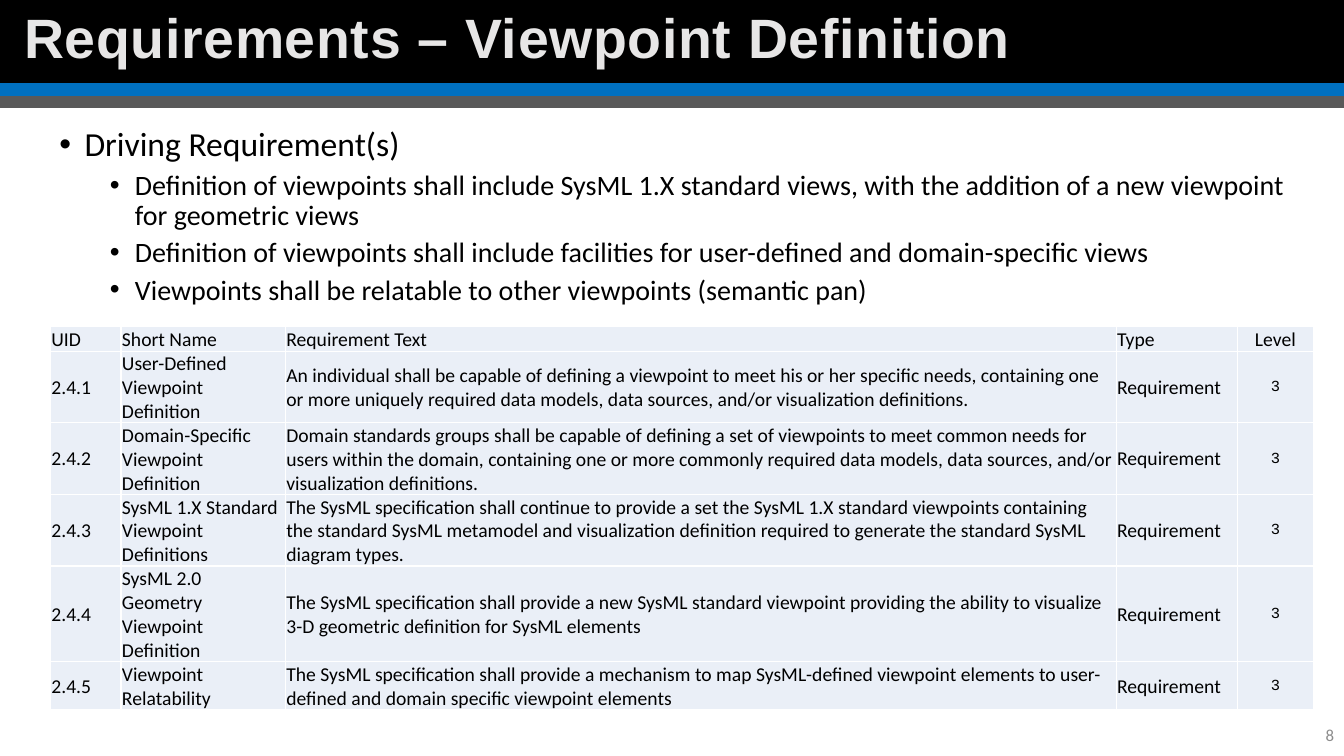
from lxml import etree
from pptx import Presentation
from pptx.dml.color import RGBColor
from pptx.enum.shapes import MSO_CONNECTOR, MSO_SHAPE
from pptx.enum.text import MSO_ANCHOR, PP_ALIGN
from pptx.oxml.ns import qn
from pptx.util import Inches, Pt

RECTANGLE = MSO_SHAPE.RECTANGLE
STRAIGHT = MSO_CONNECTOR.STRAIGHT
TOP, MIDDLE = MSO_ANCHOR.TOP, MSO_ANCHOR.MIDDLE
LEFT, CENTER, RIGHT = PP_ALIGN.LEFT, PP_ALIGN.CENTER, PP_ALIGN.RIGHT

SLIDE_WIDTH = 13.33
BLACK, WHITE, BLUE, GRAY = "000000", "FFFFFF", "0070C0", "595959"
TITLE_GRAY, NUMBER_GRAY, CELL_BLUE = "E7E6E6", "8C8C8C", "EAEFF7"

DRIVING_REQUIREMENTS = [
    (0, "Driving Requirement(s)"),
    (1, "Definition of viewpoints shall include SysML 1.X standard views, "
        "with the addition of a new viewpoint for geometric views"),
    (1, "Definition of viewpoints shall include facilities for user-defined "
        "and domain-specific views"),
    (1, "Viewpoints shall be relatable to other viewpoints (semantic pan)"),
]
BULLET_STYLES = [(0.25, 24, 10), (0.75, 20, 5)]

HEADINGS = ["UID", "Short Name", "Requirement Text", "Type", "Level"]
REQUIREMENTS = [
    ("User-Defined Viewpoint Definition",
     "An individual shall be capable of defining a viewpoint to meet his or her "
     "specific needs, containing one or more uniquely required data models, data "
     "sources, and/or visualization definitions."),
    ("Domain-Specific Viewpoint Definition",
     "Domain standards groups shall be capable of defining a set of viewpoints to "
     "meet common needs for users within the domain, containing one or more commonly "
     "required data models, data sources, and/or visualization definitions."),
    ("SysML 1.X Standard Viewpoint Definitions",
     "The SysML specification shall continue to provide a set the SysML 1.X standard "
     "viewpoints containing the standard SysML metamodel and visualization definition "
     "required to generate the standard SysML diagram types."),
    ("SysML 2.0 Geometry Viewpoint Definition",
     "The SysML specification shall provide a new SysML standard viewpoint providing "
     "the ability to visualize 3-D geometric definition for SysML elements"),
    ("Viewpoint Relatability",
     "The SysML specification shall provide a mechanism to map SysML-defined viewpoint "
     "elements to user-defined and domain specific viewpoint elements"),
]
COLUMN_WIDTHS = [0.7, 1.63, 8.24, 1.2, 0.76]
ROW_HEIGHTS = [0.23, 0.71, 0.71, 0.71, 0.95, 0.47]


def rgb(color):
    return RGBColor.from_string(color)


def set_font(paragraph, size, color=BLACK, name="Calibri", bold=False):
    font = paragraph.font
    font.size = Pt(size)
    font.name = name
    font.bold = bold
    font.color.rgb = rgb(color)


def add_band(slide, top, height, color):
    band = slide.shapes.add_shape(
        RECTANGLE, 0, Inches(top), Inches(SLIDE_WIDTH), Inches(height))
    band.shadow.inherit = False
    band.fill.solid()
    band.fill.fore_color.rgb = rgb(color)
    band.line.fill.background()


def add_stripe(slide, y, color, weight):
    stripe = slide.shapes.add_connector(
        STRAIGHT, 0, Inches(y), Inches(SLIDE_WIDTH), Inches(y))
    stripe.line.color.rgb = rgb(color)
    stripe.line.width = Pt(weight)
    etree.SubElement(stripe._element.spPr, qn("a:effectLst"))


def add_text_frame(slide, left, top, width, height, anchor):
    box = slide.shapes.add_textbox(
        Inches(left), Inches(top), Inches(width), Inches(height))
    frame = box.text_frame
    frame.word_wrap = True
    frame.vertical_anchor = anchor
    return frame


def add_title(slide, text):
    title = add_text_frame(slide, 0.14, 0.12, 10.54, 0.57, MIDDLE).paragraphs[0]
    title.line_spacing = 0.9
    title.text = text
    set_font(title, 39.6, TITLE_GRAY, "Arial", True)
    title.runs[0].font._element.set("spc", "50")


def add_bullets(slide, items):
    frame = add_text_frame(slide, 0.49, 1.22, 12.35, 2.35, TOP)
    for index, (level, text) in enumerate(items):
        bullet = frame.add_paragraph() if index else frame.paragraphs[0]
        indent, size, space = BULLET_STYLES[level]
        bullet.text = text
        bullet.level = level
        bullet.line_spacing = 0.9
        bullet.space_before = Pt(space)
        properties = bullet._p.get_or_add_pPr()
        properties.set("marL", str(Inches(indent)))
        properties.set("indent", str(Inches(-0.25)))
        etree.SubElement(properties, qn("a:buFont"), typeface="Arial")
        etree.SubElement(properties, qn("a:buChar"), char="•")
        set_font(bullet, size)


def add_borders(cell, color, weight):
    properties = cell._tc.get_or_add_tcPr()
    for side in ("lnL", "lnR", "lnT", "lnB"):
        border = etree.SubElement(properties, qn(f"a:{side}"), w=str(Pt(weight)))
        fill = etree.SubElement(border, qn("a:solidFill"))
        etree.SubElement(fill, qn("a:srgbClr"), val=color)


def fill_cell(cell, text, size, font_name, alignment):
    cell.margin_left = cell.margin_right = cell.margin_top = Inches(0.01)
    cell.margin_bottom = 0
    cell.vertical_anchor = MIDDLE
    add_borders(cell, WHITE, 1)
    cell.fill.solid()
    cell.fill.fore_color.rgb = rgb(CELL_BLUE)
    paragraph = cell.text_frame.paragraphs[0]
    paragraph.text = text
    paragraph.alignment = alignment
    set_font(paragraph, size, name=font_name)


def add_requirements_table(slide):
    rows = [HEADINGS] + [
        (f"2.4.{number}", name, text, "Requirement", "3")
        for number, (name, text) in enumerate(REQUIREMENTS, 1)]
    table = slide.shapes.add_table(
        len(rows), len(HEADINGS), Inches(0.5), Inches(3.24),
        Inches(sum(COLUMN_WIDTHS)), Inches(sum(ROW_HEIGHTS))).table
    for column, width in zip(table.columns, COLUMN_WIDTHS):
        column.width = Inches(width)
    level_column = len(HEADINGS) - 1
    for r, (values, height) in enumerate(zip(rows, ROW_HEIGHTS)):
        table.rows[r].height = Inches(height)
        for c, value in enumerate(values):
            is_level = c == level_column
            size, name = (11, "Courier New") if r and is_level else (14, "Calibri")
            fill_cell(table.cell(r, c), value, size, name,
                      CENTER if is_level else LEFT)


def add_page_number(slide, number):
    page = add_text_frame(slide, 10.33, 7.09, 3, 0.4, MIDDLE).paragraphs[0]
    page.text = number
    page.alignment = RIGHT
    set_font(page, 12, NUMBER_GRAY)


def main():
    deck = Presentation()
    deck.slide_width, deck.slide_height = Inches(SLIDE_WIDTH), Inches(7.5)
    slide = deck.slides.add_slide(deck.slide_layouts[6])
    add_band(slide, 0, 1.06, BLACK)
    add_band(slide, 0.95, 0.12, GRAY)
    add_stripe(slide, 0.89, BLUE, 9)
    add_title(slide, "Requirements – Viewpoint Definition")
    add_requirements_table(slide)
    add_page_number(slide, "8")
    add_bullets(slide, DRIVING_REQUIREMENTS)
    deck.save("out.pptx")


if __name__ == "__main__":
    main()
